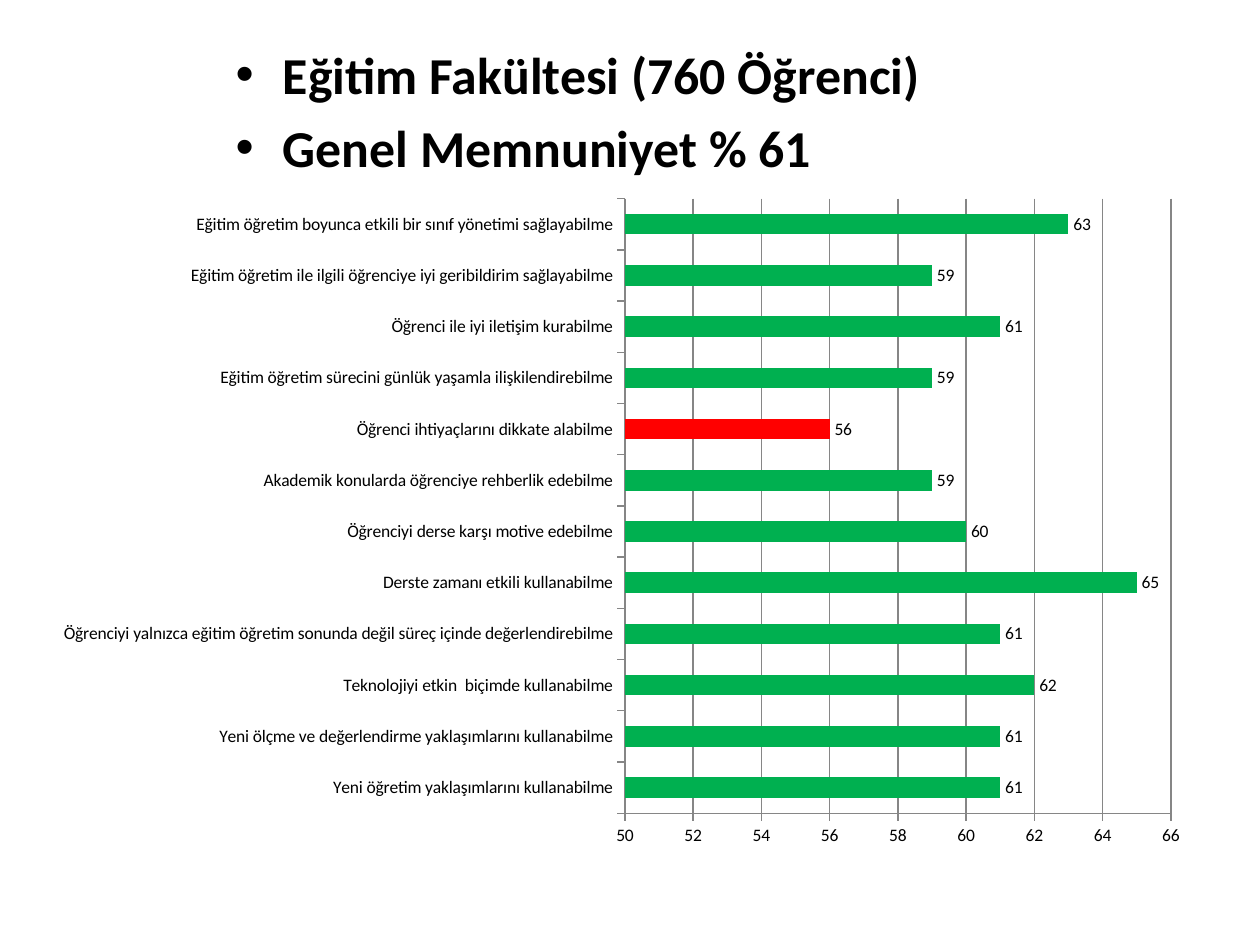
from lxml import etree
from pptx import Presentation
from pptx.chart.data import CategoryChartData as ChartData
from pptx.dml.color import RGBColor
from pptx.enum.chart import XL_CHART_TYPE as ChartType
from pptx.enum.chart import XL_LABEL_POSITION as LabelPosition
from pptx.enum.chart import XL_TICK_MARK as TickMark
from pptx.enum.text import MSO_ANCHOR as Anchor
from pptx.enum.text import MSO_AUTO_SIZE as AutoSize
from pptx.oxml.ns import qn
from pptx.util import Inches, Pt

COLORS = {"text": "000000", "bar": "00B050", "lowest": "FF0000", "line": "868686"}
FONT = "Calibri"
HEADINGS = ["Eğitim Fakültesi (760 Öğrenci)", "Genel Memnuniyet % 61"]
RATINGS = {
    "Yeni öğretim yaklaşımlarını kullanabilme": 61,
    "Yeni ölçme ve değerlendirme yaklaşımlarını kullanabilme": 61,
    "Teknolojiyi etkin  biçimde kullanabilme": 62,
    "Öğrenciyi yalnızca eğitim öğretim sonunda değil süreç içinde değerlendirebilme": 61,
    "Derste zamanı etkili kullanabilme": 65,
    "Öğrenciyi derse karşı motive edebilme": 60,
    "Akademik konularda öğrenciye rehberlik edebilme": 59,
    "Öğrenci ihtiyaçlarını dikkate alabilme": 56,
    "Eğitim öğretim sürecini günlük yaşamla ilişkilendirebilme": 59,
    "Öğrenci ile iyi iletişim kurabilme": 61,
    "Eğitim öğretim ile ilgili öğrenciye iyi geribildirim sağlayabilme": 59,
    "Eğitim öğretim boyunca etkili bir sınıf yönetimi sağlayabilme": 63,
}
PLOT = {"x": 0.5, "y": 0.02, "w": 0.47, "h": 0.91}


def color(name):
    """Return the palette colour with this name."""
    return RGBColor.from_string(COLORS[name])


def apply(target, **values):
    """Set each format value on the target."""
    for name, value in values.items():
        setattr(target, name, value)


def paint(fill, name):
    """Fill with a solid palette colour."""
    fill.solid()
    fill.fore_color.rgb = color(name)


def add_headings(page, left, top, width, height):
    """Write the bulleted headings in the body placeholder."""
    body = page.placeholders[1]
    apply(body, left=left, top=top, width=width, height=height)
    frame = body.text_frame
    apply(frame, text="\n".join(HEADINGS), word_wrap=True,
          auto_size=AutoSize.NONE, vertical_anchor=Anchor.TOP)
    for para in frame.paragraphs:
        for span in para.runs:
            apply(span.font, name=FONT, size=Pt(29.6), bold=True)
            span.font.color.rgb = color("text")


def fix_plot(chart):
    """Pin the inner plot area to fractions of the chart box."""
    area = chart.element.find(".//" + qn("c:plotArea"))
    for old in area.findall(qn("c:layout")):
        area.remove(old)
    layout = etree.Element(qn("c:layout"))
    manual = etree.SubElement(layout, qn("c:manualLayout"))
    settings = {"layoutTarget": "inner", "xMode": "edge", "yMode": "edge", **PLOT}
    for name, value in settings.items():
        etree.SubElement(manual, qn("c:" + name), val=str(value))
    area.insert(0, layout)


def add_ratings(page, left, top, width, height):
    """Draw the satisfaction ratings as bars, the lowest one marked."""
    data = ChartData(number_format="0")
    data.categories = list(RATINGS)
    data.add_series("Series 1", list(RATINGS.values()))
    chart = page.shapes.add_chart(
        ChartType.BAR_CLUSTERED, left, top, width, height, data).chart
    apply(chart, has_legend=False, has_title=False)
    apply(chart.font, name=FONT, size=Pt(10))
    chart.font.color.rgb = color("text")

    plot = chart.plots[0]
    apply(plot, gap_width=150, vary_by_categories=False, has_data_labels=True)
    apply(plot.data_labels, show_value=True, number_format="0",
          number_format_is_linked=False, position=LabelPosition.OUTSIDE_END)
    series = plot.series[0]
    paint(series.format.fill, "bar")
    values = list(RATINGS.values())
    paint(series.points[values.index(min(values))].format.fill, "lowest")

    scale = chart.value_axis
    apply(scale, minimum_scale=50, maximum_scale=66, major_unit=2,
          has_major_gridlines=True)
    apply(scale.tick_labels, number_format="0", number_format_is_linked=False)
    for axis in (scale, chart.category_axis):
        apply(axis, major_tick_mark=TickMark.OUTSIDE, minor_tick_mark=TickMark.NONE)
    for part in (scale, chart.category_axis, scale.major_gridlines):
        part.format.line.color.rgb = color("line")
        part.format.line.width = Pt(0.75)
    fix_plot(chart)


def main():
    """Build and save the deck."""
    deck = Presentation()
    apply(deck, slide_width=Inches(10), slide_height=Inches(7.5))
    page = deck.slides.add_slide(deck.slide_layouts[1])
    title = page.shapes.title.element
    title.getparent().remove(title)
    add_headings(page, Inches(1.77), Inches(0.29), Inches(6.54), Inches(1.18))
    add_ratings(page, Inches(0.35), Inches(1.47), Inches(9.22), Inches(5.36))
    deck.save("out.pptx")


if __name__ == "__main__":
    main()
